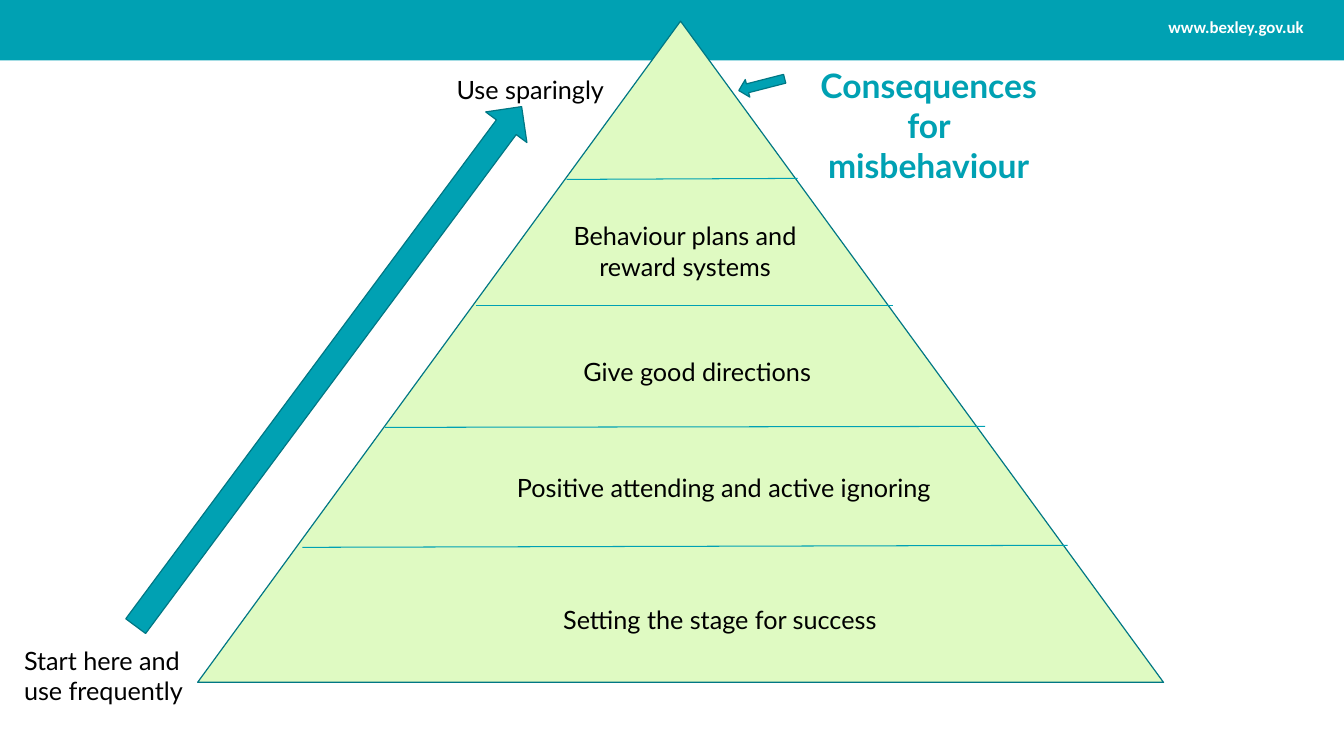
from lxml.etree import SubElement
from pptx import Presentation
from pptx.dml.color import RGBColor
from pptx.enum.shapes import MSO_CONNECTOR as Connector, MSO_SHAPE as Preset
from pptx.enum.text import MSO_ANCHOR as Anchor, MSO_AUTO_SIZE as AutoSize, PP_ALIGN as Align
from pptx.oxml.ns import qn
from pptx.util import Inches, Pt

TEAL, DARK_TEAL, LIME = "00A1B3", "007784", "DFFAC2"
BLACK, WHITE = "000000", "FFFFFF"

# Left, top, width, height
TIERS = [
    ("Setting the stage for success", (3.58, 5.95, 7.12, 0.4)),
    ("Positive attending and active ignoring", (4.72, 4.64, 4.92, 0.4)),
    ("Give good directions", (5.15, 3.49, 3.53, 0.4)),
    ("Behaviour plans and reward systems", (5.53, 2.14, 2.53, 0.71)),
]
ARROW_LABELS = [
    ("Start here and use frequently", (0.14, 6.35, 1.94, 0.71)),
    ("Use sparingly", (4.43, 0.69, 1.75, 0.4)),
]
# Start x, start y, end x, end y
DIVIDERS = [
    (3, 5.43, 10.59, 5.41),
    (3.82, 4.24, 9.77, 4.23),
    (4.72, 3.03, 8.86, 3.03),
    (5.62, 1.78, 7.91, 1.77),
]


def rgb(colour):
    return RGBColor.from_string(colour)


def inches(lengths):
    return [Inches(length) for length in lengths]


def write(frame, text, size=18, colour=BLACK, bold=False, font="Lato", align=Align.CENTER):
    frame.text = text
    frame.word_wrap = True
    frame.auto_size = AutoSize.NONE
    frame.vertical_anchor = Anchor.TOP
    paragraph = frame.paragraphs[0]
    paragraph.alignment = align
    run_font = paragraph.runs[0].font
    run_font.name, run_font.size, run_font.bold = font, Pt(size), bold
    run_font.color.rgb = rgb(colour)


def add_label(slide, text, box, **style):
    label = slide.shapes.add_textbox(*inches(box))
    write(label.text_frame, text, **style)


def add_title(slide, text, box):
    title = slide.shapes.title
    title.left, title.top, title.width, title.height = inches(box)
    write(title.text_frame, text, size=24, colour=TEAL, bold=True)


def add_figure(slide, preset, box, fill, line=None, rotation=0):
    figure = slide.shapes.add_shape(preset, *inches(box))
    figure.shadow.inherit = False
    figure.rotation = rotation
    figure.fill.solid()
    figure.fill.fore_color.rgb = rgb(fill)
    if line:
        figure.line.color.rgb = rgb(line)
        figure.line.width = Pt(0.85)
    else:
        figure.line.fill.background()
    return figure


def add_divider(slide, ends):
    divider = slide.shapes.add_connector(Connector.STRAIGHT, *inches(ends))
    divider.line.color.rgb = rgb(TEAL)
    divider.line.width = Pt(0.75)
    SubElement(divider._element.spPr, qn("a:effectLst"))


def main():
    deck = Presentation()
    deck.slide_width, deck.slide_height = Inches(13.33), Inches(7.5)
    slide = deck.slides.add_slide(deck.slide_layouts.get_by_name("Title Only"))

    add_figure(slide, Preset.RECTANGLE, (0, 0, 13.33, 0.6), TEAL)
    add_label(slide, "www.bexley.gov.uk", (11.42, 0.12, 1.68, 0.3),
              size=12, colour=WHITE, bold=True, font="Calibri")

    add_figure(slide, Preset.ISOSCELES_TRIANGLE, (1.96, 0.21, 9.58, 6.56), LIME, DARK_TEAL)
    for ends in DIVIDERS:
        add_divider(slide, ends)
    for text, box in TIERS:
        add_label(slide, text, box)

    add_title(slide, "Consequences for misbehaviour", (7.99, 0.59, 2.44, 1.31))
    frequency_arrow = add_figure(slide, Preset.RIGHT_ARROW, (0.05, 3.38, 6.42, 0.51),
                                 TEAL, DARK_TEAL, rotation=306.6)
    frequency_arrow.adjustments[0] = 0.48
    for text, box in ARROW_LABELS:
        add_label(slide, text, box, align=Align.LEFT)
    add_figure(slide, Preset.LEFT_ARROW, (7.32, 0.75, 0.47, 0.18),
               TEAL, DARK_TEAL, rotation=345.6)

    deck.save("out.pptx")


if __name__ == "__main__":
    main()
